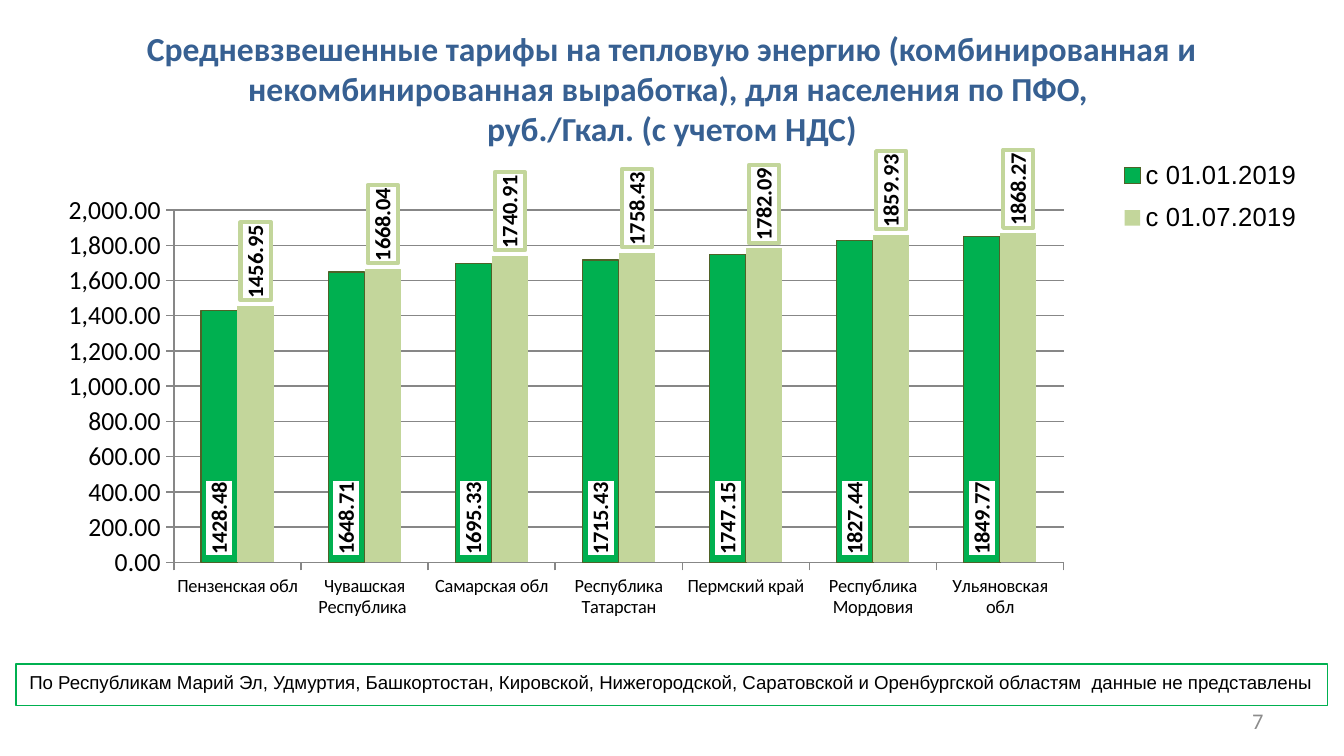
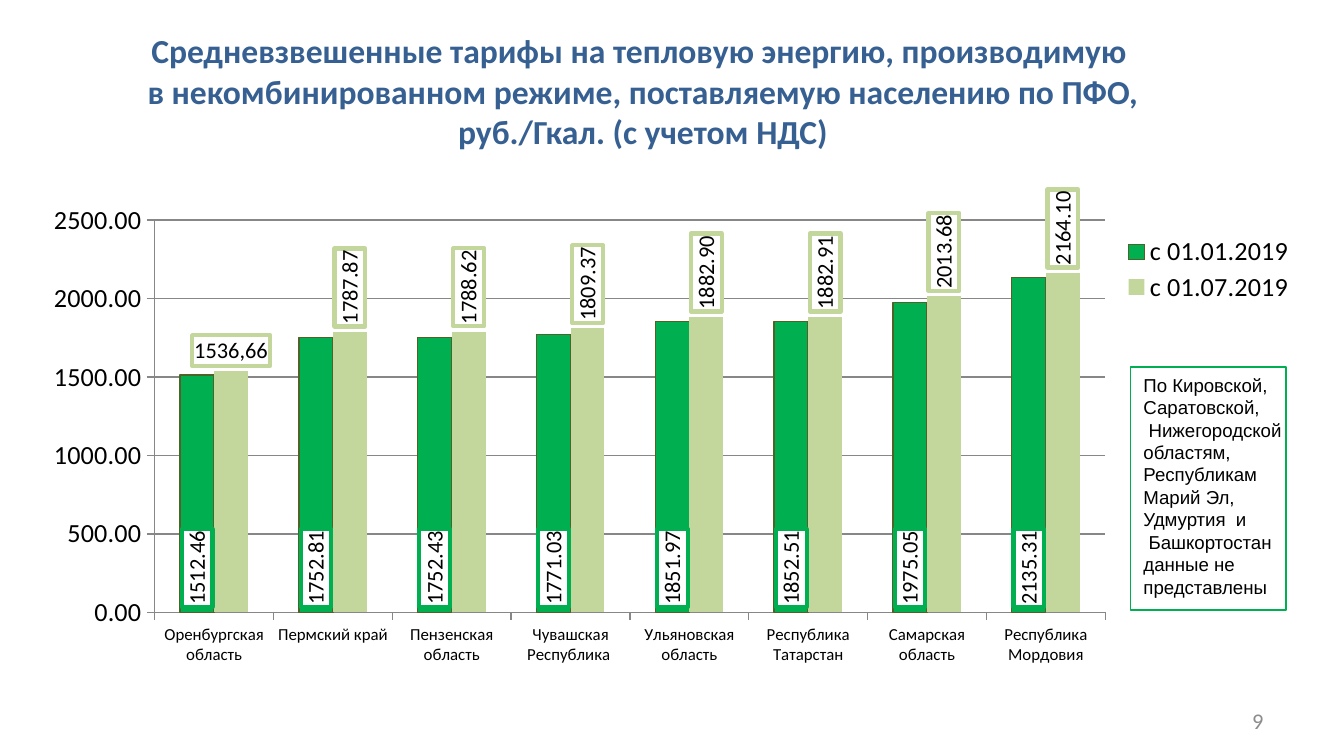
import pptx
import pptx.chart.data
import pptx.dml.color
import pptx.enum.chart
import pptx.enum.shapes
import pptx.enum.text
import pptx.oxml
import pptx.oxml.ns
import pptx.util

# Content
COLORS = {"title": "376092", "text": "000000", "number": "8C8C8C", "grid": "878787",
          "january": "00B050", "january_line": "4F6228", "july": "C3D69B",
          "white": "FFFFFF"}
PERIODS = ("c 01.01.2019", "c 01.07.2019")

SLIDES = [
    {
        "number": "7",
        "title": ["Средневзвешенные тарифы на тепловую энергию (комбинированная и "
                  "некомбинированная выработка), для населения по ПФО, ",
                  "руб./Гкал. (с учетом НДС)"],
        "title_box": (0, 0.33, 10, 0.65),
        "tariffs": [
            ("Пензенская обл", 1428.48, 1456.95),
            ("Чувашская Республика ", 1648.71, 1668.04),
            ("Самарская обл", 1695.33, 1740.91),
            ("Республика Татарстан", 1715.43, 1758.43),
            ("Пермский край", 1747.15, 1782.09),
            ("Республика Мордовия", 1827.44, 1859.93),
            ("Ульяновская обл", 1849.77, 1868.27),
        ],
        "chart_box": (0.51, 0.14, 9.29, 4.49),
        "plot": (0.066, 0.317, 0.727, 0.584),
        "legend": (0.838, 0.215, 0.15, 0.16),
        "legend_font": "Arial",
        "scale": (2000, 200), "axis_format": "#,##0.00", "label_format": "General",
        "category_size": 10, "bold_labels": True, "flat_labels": {},
        "note": ["По Республикам Марий Эл, Удмуртия, Башкортостан, Кировской, "
                 "Нижегородской, Саратовской и Оренбургской областям  "
                 "данные не представлены"],
        "note_box": (0.12, 4.94, 9.76, 0.31),
    },
    {
        "number": "9",
        "title": ["Средневзвешенные тарифы на тепловую энергию, производимую ",
                  "в некомбинированном режиме, поставляемую населению по ПФО,",
                  "руб./Гкал. (с учетом НДС)"],
        "title_box": (0, 0.37, 9.57, 0.61),
        "tariffs": [
            ("Оренбургская область", 1512.46, 1536.66),
            ("Пермский край", 1752.81, 1787.87),
            ("Пензенская область", 1752.43, 1788.62),
            ("Чувашская Республика ", 1771.03, 1809.37),
            ("Ульяновская область", 1851.97, 1882.90),
            ("Республика Татарстан", 1852.51, 1882.91),
            ("Самарская область", 1975.05, 2013.68),
            ("Республика Мордовия", 2135.31, 2164.10),
        ],
        "chart_box": (0.2, 0.78, 9.61, 4.54),
        "plot": (0.099, 0.189, 0.736, 0.643),
        "legend": (0.84, 0.21, 0.15, 0.12),
        "legend_font": "Calibri",
        "scale": (2500, 500), "axis_format": "0.00", "label_format": "0.00",
        "category_size": 9, "bold_labels": False, "flat_labels": {0: "1536,66"},
        "note": ["По Кировской,", "Саратовской,", " Нижегородской", "областям,",
                 "Республикам", "Марий Эл,", "Удмуртия  и", " Башкортостан",
                 "данные не", "представлены"],
        "note_box": (8.41, 2.73, 1.16, 1.81),
    },
]
NUMBER_BOX = (7.17, 5.21, 2.33, 0.3)


# Helpers
def rgb(name):
    return pptx.dml.color.RGBColor.from_string(COLORS[name])


def inches(box):
    return [pptx.util.Inches(v) for v in box]


def set_font(font, size, color="text", name="Calibri", bold=False):
    font.size, font.name, font.bold = pptx.util.Pt(size), name, bold
    font.color.rgb = rgb(color)


def set_line(line, color, width=0.75):
    line.color.rgb = rgb(color)
    line.width = pptx.util.Pt(width)


def xml(body):
    return pptx.oxml.parse_xml(body.replace(">", " " + pptx.oxml.ns.nsdecls("c", "a") + ">", 1))


def manual_layout(box, inner=False):
    target = '<c:layoutTarget val="inner"/>' if inner else ""
    modes = '<c:xMode val="edge"/><c:yMode val="edge"/>'
    sizes = "".join(f'<c:{k} val="{v}"/>' for k, v in zip("xywh", box))
    return xml(f"<c:layout><c:manualLayout>{target}{modes}{sizes}"
               "</c:manualLayout></c:layout>")


def label_frame(color):
    return xml(f'<c:spPr><a:solidFill><a:srgbClr val="{COLORS["white"]}"/></a:solidFill>'
               f'<a:ln w="{pptx.util.Pt(2.25)}"><a:solidFill>'
               f'<a:srgbClr val="{COLORS[color]}"/></a:solidFill></a:ln></c:spPr>')


# Parts of a slide
def add_title(s, page):
    title = s.shapes.title
    title.left, title.top, title.width, title.height = inches(page["title_box"])
    tf = title.text_frame
    tf.vertical_anchor = pptx.enum.text.MSO_ANCHOR.MIDDLE
    p = tf.paragraphs[0]
    p.alignment = pptx.enum.text.PP_ALIGN.CENTER
    for i, line in enumerate(page["title"]):
        if i:
            p.add_line_break()
        r = p.add_run()
        r.text = line
        set_font(r.font, 18, "title", bold=True)


def add_labels(series, color, page):
    labels = series.data_labels
    labels.show_value = True
    labels.number_format = page["label_format"]
    labels.number_format_is_linked = False
    set_font(labels.font, 12, bold=page["bold_labels"])
    text = labels._element.find(pptx.oxml.ns.qn("c:txPr"))
    text.addprevious(label_frame(color))
    body = text.find(pptx.oxml.ns.qn("a:bodyPr"))
    body.set("rot", "-5400000")
    body.set("vert", "horz")
    if color == "january":
        labels.position = pptx.enum.chart.XL_LABEL_POSITION.INSIDE_BASE
        return
    for i, value in page["flat_labels"].items():
        tf = series.points[i].data_label.text_frame
        r = tf.paragraphs[0].add_run()
        r.text = value
        set_font(r.font, 12)
    for label in labels._element.findall(pptx.oxml.ns.qn("c:dLbl")):
        label.find(pptx.oxml.ns.qn("c:tx")).addnext(label_frame(color))


def add_tariff_chart(s, page):
    regions, january, july = zip(*page["tariffs"])
    data = pptx.chart.data.CategoryChartData(number_format=page["label_format"])
    data.categories = regions
    for period, values in zip(PERIODS, (january, july)):
        data.add_series(period, values)
    chart = s.shapes.add_chart(pptx.enum.chart.XL_CHART_TYPE.COLUMN_CLUSTERED,
                               *inches(page["chart_box"]), data).chart
    chart.has_title = False
    set_font(chart.font, 18)

    # Axes
    category, value = chart.category_axis, chart.value_axis
    for axis, size in ((category, page["category_size"]), (value, 14)):
        axis.major_tick_mark = pptx.enum.chart.XL_TICK_MARK.OUTSIDE
        set_font(axis.tick_labels.font, size)
        set_line(axis.format.line, "grid")
    value.minimum_scale = 0
    value.maximum_scale, value.major_unit = page["scale"]
    value.tick_labels.number_format = page["axis_format"]
    value.tick_labels.number_format_is_linked = False
    set_line(value.major_gridlines.format.line, "grid")

    # Columns
    plot = chart.plots[0]
    plot.vary_by_categories = False
    plot.gap_width, plot.overlap = 150, 0
    for series, color in zip(plot.series, ("january", "july")):
        series.format.fill.solid()
        series.format.fill.fore_color.rgb = rgb(color)
        add_labels(series, color, page)
    set_line(plot.series[0].format.line, "january_line")

    # Legend and plot area
    chart.has_legend = True
    legend = chart.legend
    legend.position = pptx.enum.chart.XL_LEGEND_POSITION.RIGHT
    legend.include_in_layout = False
    set_font(legend.font, 14, name=page["legend_font"])
    area = chart._chartSpace.chart.plotArea
    for parent in (area, legend._element):
        for old in parent.findall(pptx.oxml.ns.qn("c:layout")):
            parent.remove(old)
    area.insert(0, manual_layout(page["plot"], inner=True))
    legend._element.find(pptx.oxml.ns.qn("c:legendPos")).addnext(
        manual_layout(page["legend"]))


def add_note(s, page):
    sp = s.shapes.add_shape(pptx.enum.shapes.MSO_SHAPE.RECTANGLE, *inches(page["note_box"]))
    sp.shadow.inherit = False
    sp.fill.background()
    set_line(sp.line, "january")
    tf = sp.text_frame
    tf.word_wrap = False
    tf.vertical_anchor = pptx.enum.text.MSO_ANCHOR.TOP
    for i, line in enumerate(page["note"]):
        p = tf.add_paragraph() if i else tf.paragraphs[0]
        p.alignment = pptx.enum.text.PP_ALIGN.LEFT
        r = p.add_run()
        r.text = line
        set_font(r.font, 10, name="Arial")


def add_number(s, number):
    tf = s.shapes.add_textbox(*inches(NUMBER_BOX)).text_frame
    tf.word_wrap = True
    tf.vertical_anchor = pptx.enum.text.MSO_ANCHOR.MIDDLE
    p = tf.paragraphs[0]
    p.alignment = pptx.enum.text.PP_ALIGN.RIGHT
    r = p.add_run()
    r.text = number
    set_font(r.font, 12, "number")


def main():
    prs = pptx.Presentation()
    prs.slide_width = pptx.util.Inches(10)
    prs.slide_height = prs.slide_width * 9 // 16
    for page in SLIDES:
        s = prs.slides.add_slide(prs.slide_layouts[0])
        subtitle = s.placeholders[1]._element
        subtitle.getparent().remove(subtitle)
        add_title(s, page)
        add_tariff_chart(s, page)
        add_number(s, page["number"])
        add_note(s, page)
    prs.save("out.pptx")


if __name__ == "__main__":
    main()
